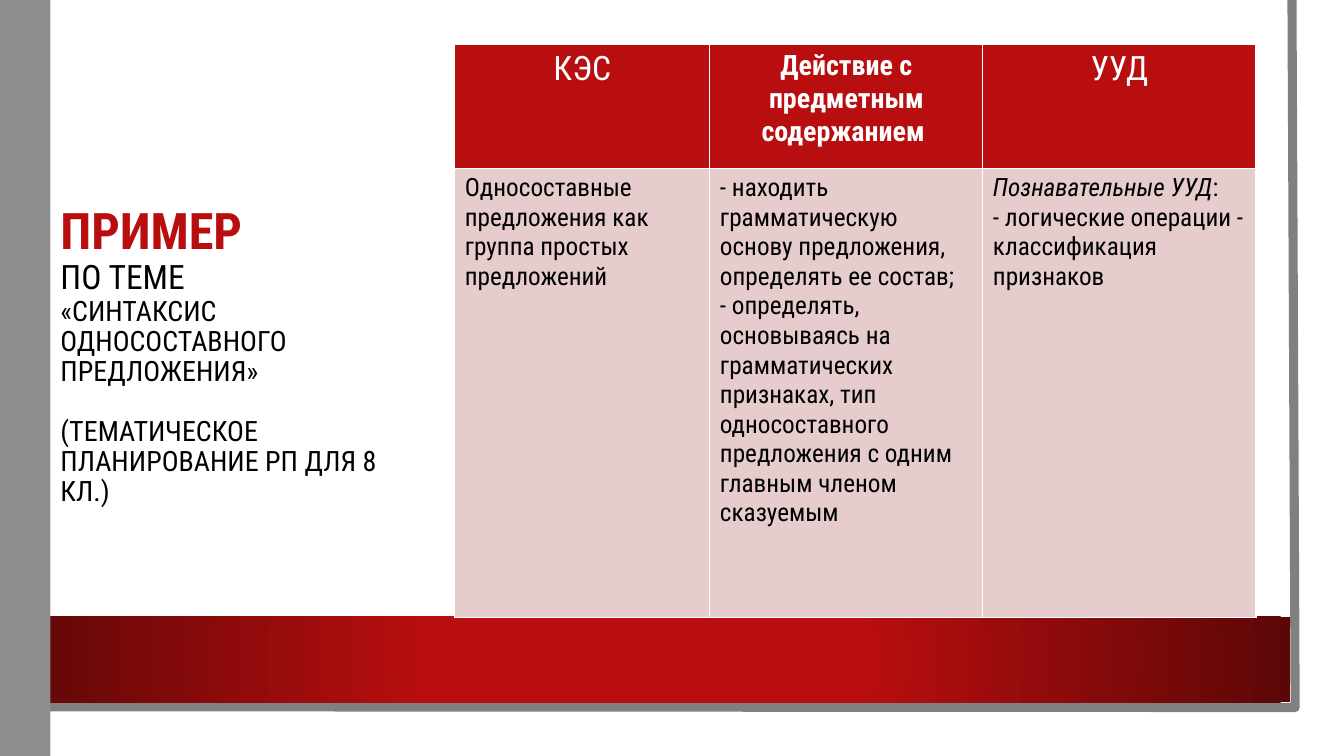
from dataclasses import dataclass

from lxml.etree import SubElement
from pptx import Presentation
from pptx.dml.color import RGBColor as Rgb
from pptx.enum.shapes import MSO_SHAPE as Preset
from pptx.enum.text import MSO_ANCHOR as Anchor, MSO_AUTO_SIZE as AutoSize, PP_ALIGN as Align
from pptx.oxml import parse_xml
from pptx.oxml.ns import nsdecls, qn
from pptx.util import Cm, Pt


@dataclass(frozen=True)
class Theme:
    font: str = "Roboto Condensed"
    red: str = "B80E0F"
    dark_red: str = "5C0707"
    pink: str = "E6CCCC"
    bar_grey: str = "8E8E8E"
    frame_grey: str = "808080"
    white: str = "FFFFFF"
    black: str = "000000"
    heading: int = 36
    large: int = 24
    medium: int = 20
    body: int = 18


THEME = Theme()


@dataclass(frozen=True)
class Span:
    text: str
    size: int
    color: str = THEME.black
    bold: bool = False
    italic: bool = False


@dataclass(frozen=True)
class Line:
    spans: tuple[Span, ...]
    space_before: int = 0


def body_line(text: str) -> Line:
    return Line((Span(text, THEME.body),))


def header_line(text: str, size: int, bold: bool = False) -> Line:
    return Line((Span(text, size, THEME.white, bold),))


TITLE_LINES = (
    Line((Span("ПРИМЕР", THEME.heading, THEME.red, bold=True),)),
    Line((Span("ПО ТЕМЕ", THEME.large),)),
    Line((Span("«СИНТАКСИС ОДНОСОСТАВНОГО ПРЕДЛОЖЕНИЯ»", THEME.medium),)),
    Line((Span("(ТЕМАТИЧЕСКОЕ ПЛАНИРОВАНИЕ РП ДЛЯ 8 КЛ.)", THEME.medium),), space_before=21),
)
HEADER = (
    (header_line("КЭС", THEME.large),),
    (header_line("Действие с предметным содержанием ", THEME.medium, bold=True),),
    (header_line("УУД", THEME.large),),
)
CONTENT = (
    (body_line("Односоставные предложения как группа простых предложений"),),
    (
        body_line("- находить грамматическую основу предложения, определять ее состав;"),
        body_line("- определять, основываясь на грамматических признаках, тип "
                  "односоставного предложения с одним главным членом сказуемым"),
    ),
    (
        Line((Span("Познавательные УУД", THEME.body, italic=True), Span(":", THEME.body))),
        body_line("- логические операции - классификация признаков"),
    ),
)
COLUMN_WIDTHS = (6.43, 6.88, 6.88)
ROW_HEIGHTS = (3.12, 11.33)
TOP = Cm(1.12)


def write_lines(frame, lines: tuple[Line, ...], align: Align, spacing: float = 1.0) -> None:
    for index, line in enumerate(lines):
        paragraph = frame.add_paragraph() if index else frame.paragraphs[0]
        paragraph.alignment = align
        paragraph.line_spacing = spacing
        paragraph.space_before = Pt(line.space_before)
        for span in line.spans:
            run = paragraph.add_run()
            run.text = span.text
            font = run.font
            font.name, font.size = THEME.font, Pt(span.size)
            font.bold, font.italic = span.bold, span.italic
            font.color.rgb = Rgb.from_string(span.color)


def add_block(shapes, left: float, top: float, width: float, height: float, color: str):
    block = shapes.add_shape(Preset.RECTANGLE, Cm(left), Cm(top), Cm(width), Cm(height))
    block.shadow.inherit = False
    block.fill.solid()
    block.fill.fore_color.rgb = Rgb.from_string(color)
    block.line.fill.background()
    return block


def shade_from_centre(block, inner: str, outer: str) -> None:
    gradient = parse_xml(
        f'<a:gradFill {nsdecls("a")} rotWithShape="1"><a:gsLst>'
        f'<a:gs pos="34000"><a:srgbClr val="{inner}"/></a:gs>'
        f'<a:gs pos="100000"><a:srgbClr val="{outer}"/></a:gs></a:gsLst>'
        '<a:path path="circle"><a:fillToRect l="50000" t="50000" r="50000" b="50000"/></a:path>'
        '</a:gradFill>')
    properties = block.element.spPr
    properties.replace(properties.find(qn("a:solidFill")), gradient)


def add_frame(shapes) -> None:
    builder = shapes.build_freeform(Cm(32.56), 0, scale=1.0)
    builder.add_line_segments([(Cm(32.64), Cm(17.83)), (0, Cm(17.81))], close=False)
    frame = builder.convert_to_shape()
    frame.shadow.inherit = False
    frame.fill.background()
    frame.line.color.rgb = Rgb.from_string(THEME.frame_grey)
    frame.line.width = Pt(6.5)


def border_cell(cell) -> None:
    properties = cell._tc.get_or_add_tcPr()
    for index, side in enumerate(("lnL", "lnR", "lnT", "lnB")):
        edge = SubElement(properties, qn(f"a:{side}"), w=str(Pt(1)))
        color = SubElement(edge, qn("a:solidFill"))
        SubElement(color, qn("a:srgbClr"), val=THEME.white)
        properties.insert(index, edge)


def fill_row(table, row: int, cells: tuple[tuple[Line, ...], ...], color: str, align: Align) -> None:
    for column, lines in enumerate(cells):
        cell = table.cell(row, column)
        cell.fill.solid()
        cell.fill.fore_color.rgb = Rgb.from_string(color)
        border_cell(cell)
        write_lines(cell.text_frame, lines, align)


def main() -> None:
    deck = Presentation()
    deck.slide_width, deck.slide_height = Cm(33.87), Cm(19.05)
    slide = deck.slides.add_slide(deck.slide_layouts[5])
    shapes = slide.shapes

    # Frame, red band and side bar
    add_frame(shapes)
    band = add_block(shapes, 0, 15.54, 32.51, 2.16, THEME.red)
    shade_from_centre(band, THEME.red, THEME.dark_red)
    add_block(shapes, 0, 0, 1.27, 19.05, THEME.bar_grey)

    # Title
    title = shapes.title
    title.left, title.top, title.width, title.height = Cm(1.27), TOP, Cm(9.19), Cm(15.75)
    title.text_frame.auto_size = AutoSize.NONE
    title.text_frame.word_wrap = True
    title.text_frame.vertical_anchor = Anchor.MIDDLE
    write_lines(title.text_frame, TITLE_LINES, Align.LEFT, spacing=0.9)

    # Planning table
    planning = shapes.add_table(
        len(ROW_HEIGHTS), len(COLUMN_WIDTHS), Cm(11.46), TOP,
        Cm(sum(COLUMN_WIDTHS)), Cm(sum(ROW_HEIGHTS))).table
    for column, width in zip(planning.columns, COLUMN_WIDTHS):
        column.width = Cm(width)
    for row, height in zip(planning.rows, ROW_HEIGHTS):
        row.height = Cm(height)
    fill_row(planning, 0, HEADER, THEME.red, Align.CENTER)
    fill_row(planning, 1, CONTENT, THEME.pink, Align.LEFT)

    deck.save("out.pptx")


if __name__ == "__main__":
    main()
